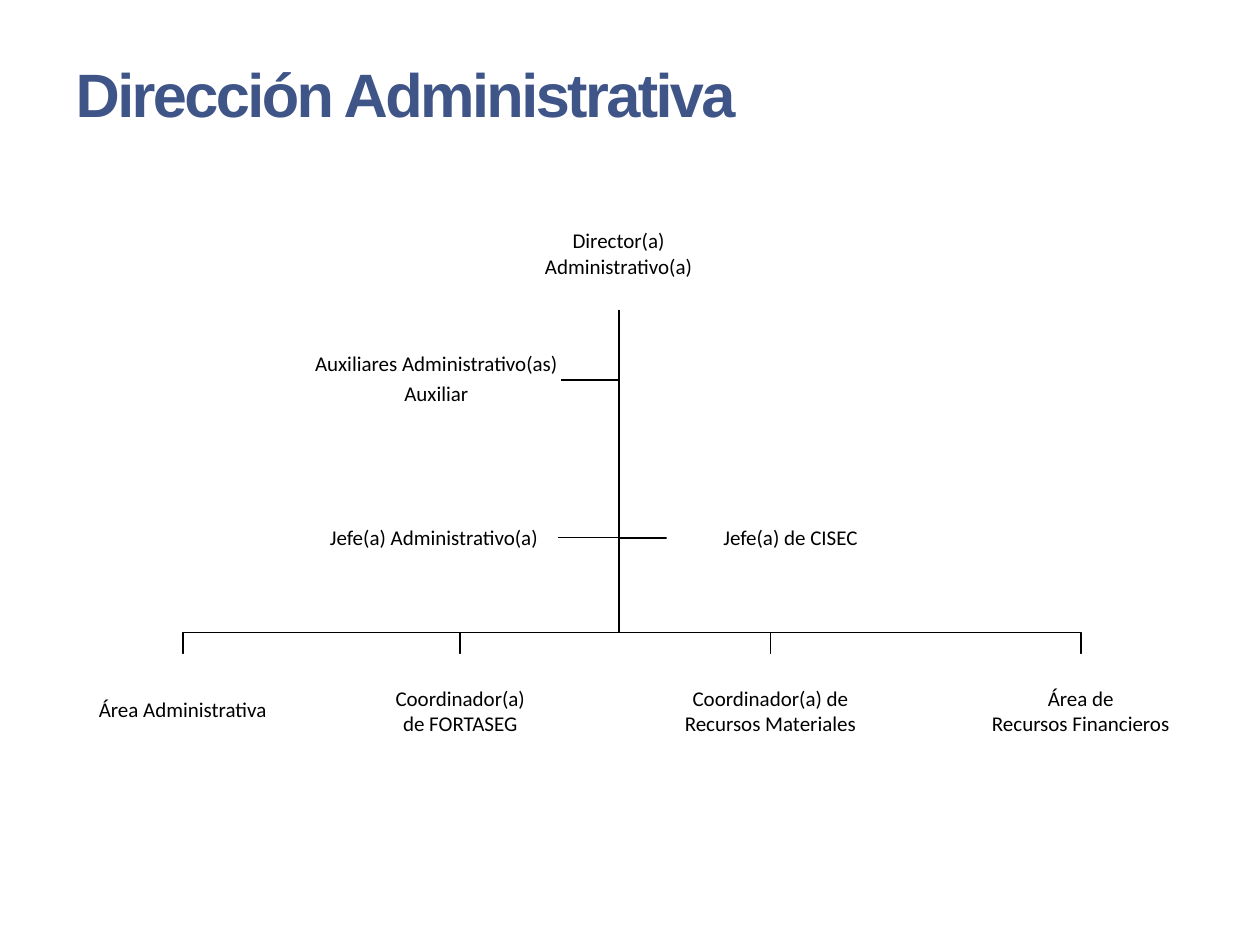
from pptx import Presentation
from pptx.dml.color import RGBColor
from pptx.enum.text import MSO_ANCHOR, PP_ALIGN
from pptx.util import Pt

COLORS = {"title": "3F5588", "ink": "000000", "paper": "FFFFFF"}
TITLE_FONT = {"name": "Arial", "size": Pt(35), "bold": True}
LABEL_FONT = {"name": "Calibri", "size": Pt(12), "bold": False}
TITLE_FRAME = {"vertical_anchor": MSO_ANCHOR.TOP, "word_wrap": True}
LABEL_FRAME = {"vertical_anchor": MSO_ANCHOR.MIDDLE, "word_wrap": True,
               "margin_left": Pt(0.7), "margin_right": Pt(0.7),
               "margin_top": Pt(0.7), "margin_bottom": Pt(0.7)}
PLAIN = {"alignment": PP_ALIGN.CENTER}
SPACED = {"alignment": PP_ALIGN.CENTER, "line_spacing": 0.9, "space_after": Pt(4.2)}

DIRECTOR = ["Director(a)", "Administrativo(a)"]
STAFF = [
    (["Jefe(a) Administrativo(a)"], 140.4, 166.5, PLAIN),
    (["Jefe(a) de CISEC"], 344.2, 166.9, SPACED),
    (["Auxiliares Administrativo(as)", "Auxiliar"], 141.8, 76.5, SPACED),
]
AREAS = [
    (["Área Administrativa"], 135.4, SPACED),
    (["Coordinador(a)", "de FORTASEG"], 135.4, PLAIN),
    (["Coordinador(a) de", "Recursos Materiales"], 172.8, PLAIN),
    (["Área de", "Recursos Financieros"], 135.4, PLAIN),
]
BOX_HEIGHT = 64.8
STAFF_WIDTH, STAFF_HEIGHT = 141.8, 56.7
AREA_GAP = 23.2
BAR_RISE = 12.3


def apply(target, values):
    for name, value in values.items():
        setattr(target, name, value)


def style_font(font, values, color):
    apply(font, values)
    font.color.rgb = RGBColor.from_string(COLORS[color])


def add_label(slide, lines, left, top, width, height, paragraph_format, filled=True):
    shape = slide.shapes.add_textbox(Pt(left), Pt(top), Pt(width), Pt(height))
    if filled:
        shape.fill.solid()
        shape.fill.fore_color.rgb = RGBColor.from_string(COLORS["paper"])
    frame = shape.text_frame
    apply(frame, LABEL_FRAME)
    frame.text = "\n".join(lines)
    for paragraph in frame.paragraphs:
        apply(paragraph, paragraph_format)
        style_font(paragraph.runs[0].font, LABEL_FONT, "ink")


def add_branch(slide, points):
    corners = [(Pt(x), Pt(y)) for x, y in points]
    builder = slide.shapes.build_freeform(*corners[0])
    builder.add_line_segments(corners[1:], close=False)
    shape = builder.convert_to_shape()
    shape.shadow.inherit = False
    shape.fill.background()
    shape.line.width = Pt(1)
    shape.line.color.rgb = RGBColor.from_string(COLORS["ink"])


def place_title(slide, left, top, width, height):
    title = slide.shapes.title
    apply(title, {"left": Pt(left), "top": Pt(top),
                  "width": Pt(width), "height": Pt(height)})
    frame = title.text_frame
    apply(frame, TITLE_FRAME)
    frame.text = "Dirección Administrativa"
    paragraph = frame.paragraphs[0]
    paragraph.alignment = PP_ALIGN.LEFT
    run = paragraph.runs[0]
    style_font(run.font, TITLE_FONT, "title")
    run.font._element.set("spc", "-150")


def place_organization(slide, left, top, width, height):
    trunk = left + 316.8
    trunk_top = top + BOX_HEIGHT
    area_top = top + height - BOX_HEIGHT
    bar = area_top - BAR_RISE

    staff = [(lines, left + x, top + y, style) for lines, x, y, style in STAFF]
    areas = []
    area_left = left
    for lines, area_width, style in AREAS:
        areas.append((lines, area_left, area_width, style))
        area_left += area_width + AREA_GAP

    for _, x, y, _ in staff:
        edge = x if x > trunk else x + STAFF_WIDTH
        middle = y + STAFF_HEIGHT / 2
        add_branch(slide, [(trunk, trunk_top), (trunk, middle), (edge, middle)])
    for _, x, area_width, _ in areas:
        center = x + area_width / 2
        add_branch(slide, [(trunk, trunk_top), (trunk, bar),
                           (center, bar), (center, area_top)])

    add_label(slide, DIRECTOR, trunk - 94.3, top, 188.6, BOX_HEIGHT, PLAIN, filled=False)
    for lines, x, area_width, style in areas:
        add_label(slide, lines, x, area_top, area_width, BOX_HEIGHT, style)
    for lines, x, y, style in staff:
        add_label(slide, lines, x, y, STAFF_WIDTH, STAFF_HEIGHT, style)


def main():
    presentation = Presentation()
    presentation.slide_width, presentation.slide_height = Pt(720), Pt(540)
    slide = presentation.slides.add_slide(presentation.slide_layouts[5])
    place_title(slide, 36, 28.8, 537.1, 49.7)
    place_organization(slide, 36.7, 112.3, 648.6, 326.2)
    presentation.save("out.pptx")


if __name__ == "__main__":
    main()
